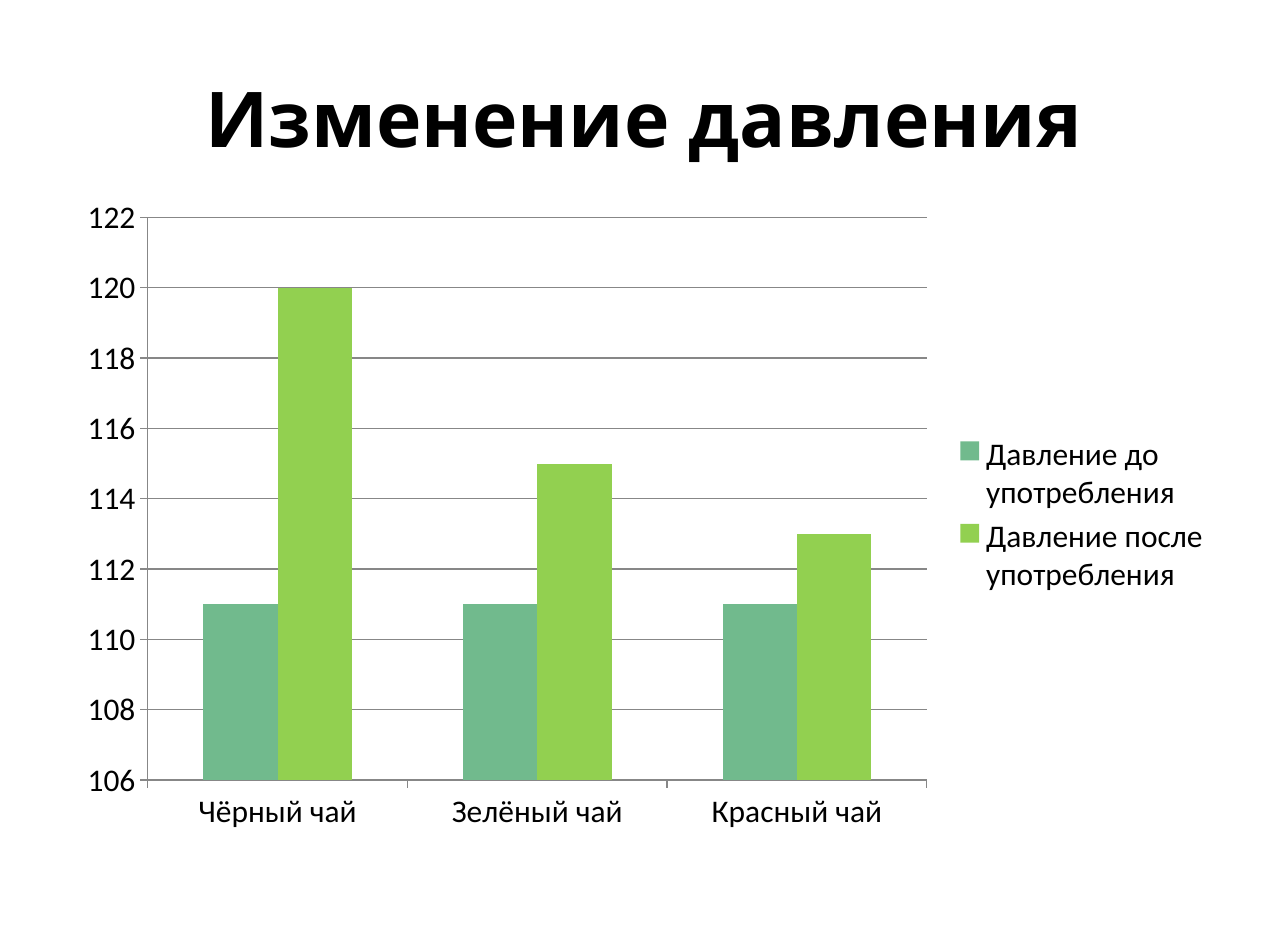
import pptx
import pptx.util
import pptx.dml.color
import pptx.chart.data
import pptx.enum.chart
import pptx.enum.text

EMU_PER_PX = 914.4  # 1000 px to the inch
SLIDE_WIDTH = pptx.util.Emu(9361488)


def px(length):
    return pptx.util.Emu(round(length * EMU_PER_PX))


def color(hex_string):
    return pptx.dml.color.RGBColor.from_string(hex_string)


class SlideBuilder:
    title_font = "Karla"
    chart_font = "Calibri"
    text_color = "000000"
    line_color = "878787"

    def __init__(self, presentation):
        self.slide = presentation.slides.add_slide(presentation.slide_layouts[5])
        self.slide.background.fill.solid()
        self.slide.background.fill.fore_color.rgb = color("FFFFFF")

    def title(self, text, left, top, width, height):
        shape = self.slide.shapes.title
        shape.left, shape.top = px(left), px(top)
        shape.width, shape.height = px(width), px(height)
        frame = shape.text_frame
        frame.word_wrap = True
        frame.vertical_anchor = pptx.enum.text.MSO_ANCHOR.MIDDLE
        paragraph = frame.paragraphs[0]
        paragraph.alignment = pptx.enum.text.PP_ALIGN.CENTER
        run = paragraph.add_run()
        run.text = text
        run.font.name = self.title_font
        run.font.size = pptx.util.Pt(44)
        run.font.bold = True
        run.font.color.rgb = color(self.text_color)

    def axis_style(self, axis):
        axis.major_tick_mark = pptx.enum.chart.XL_TICK_MARK.OUTSIDE
        axis.minor_tick_mark = pptx.enum.chart.XL_TICK_MARK.NONE
        self.line_style(axis.format.line)

    def line_style(self, line):
        line.color.rgb = color(self.line_color)
        line.width = pptx.util.Pt(0.75)

    def column_chart(self, categories, series_list, scale, left, top, width, height):
        data = pptx.chart.data.CategoryChartData()
        data.categories = categories
        for name, values, _ in series_list:
            data.add_series(name, values)
        chart = self.slide.shapes.add_chart(
            pptx.enum.chart.XL_CHART_TYPE.COLUMN_CLUSTERED,
            px(left), px(top), px(width), px(height), data).chart
        chart.has_title = False
        chart.font.name = self.chart_font
        chart.font.size = pptx.util.Pt(18)
        chart.font.color.rgb = color(self.text_color)

        # Columns
        plot = chart.plots[0]
        plot.gap_width = 150
        plot.overlap = 0
        plot.vary_by_categories = False
        for series, (_, _, fill) in zip(plot.series, series_list):
            series.format.fill.solid()
            series.format.fill.fore_color.rgb = color(fill)

        # Axes and gridlines
        self.axis_style(chart.category_axis)
        value_axis = chart.value_axis
        self.axis_style(value_axis)
        value_axis.minimum_scale, value_axis.maximum_scale, value_axis.major_unit = scale
        value_axis.has_major_gridlines = True
        self.line_style(value_axis.major_gridlines.format.line)

        # Legend
        chart.has_legend = True
        chart.legend.position = pptx.enum.chart.XL_LEGEND_POSITION.RIGHT
        chart.legend.include_in_layout = False


def main():
    presentation = pptx.Presentation()
    presentation.slide_width = SLIDE_WIDTH
    presentation.slide_height = px(7500)

    builder = SlideBuilder(presentation)
    builder.title("Изменение давления", 512, 300, 9214, 1250)
    builder.column_chart(
        ["Чёрный чай", "Зелёный чай", "Красный чай"],
        [("Давление до употребления", (111, 111, 111), "71BA8D"),
         ("Давление после употребления", (120, 115, 113), "92D050")],
        (106, 122, 2), 512, 1470, 9214, 5234)

    presentation.save("out.pptx")


if __name__ == "__main__":
    main()
